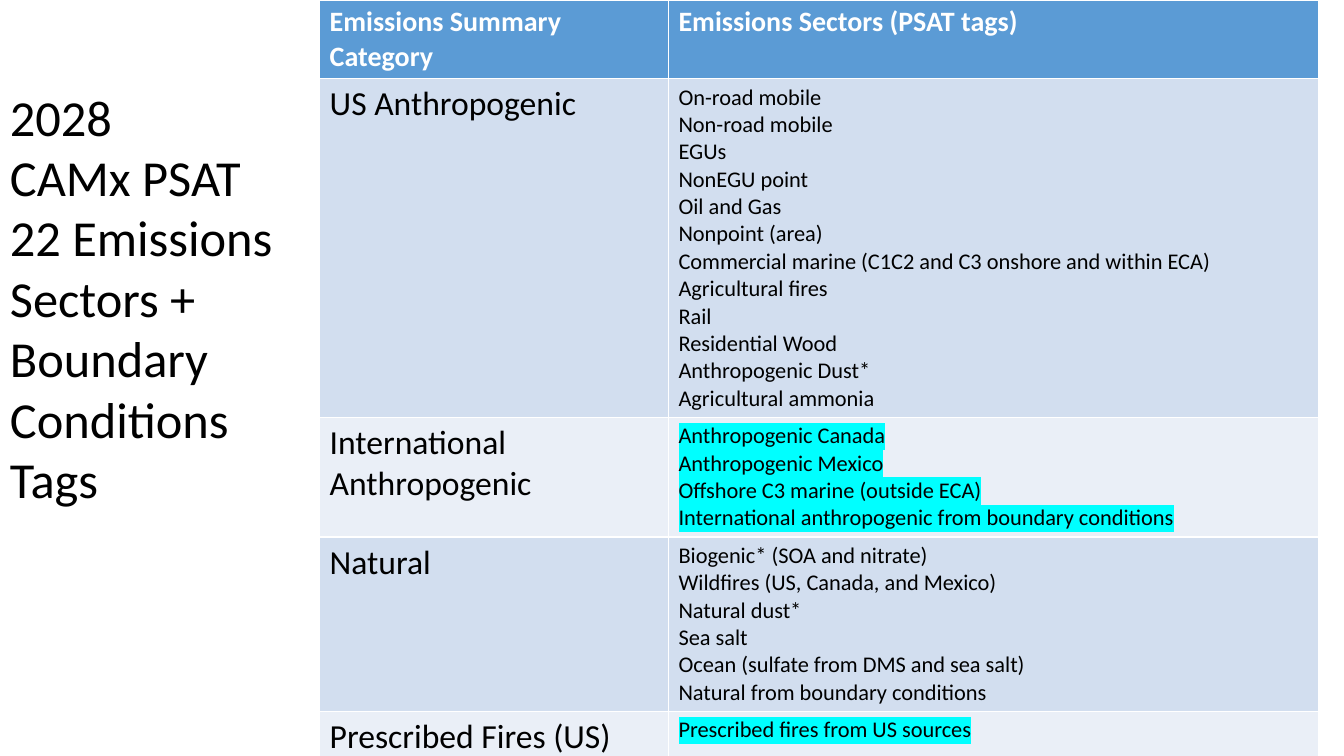
from dataclasses import dataclass

from lxml import etree
from pptx import Presentation
from pptx.dml.color import RGBColor
from pptx.enum.text import MSO_AUTO_SIZE
from pptx.oxml.ns import qn
from pptx.util import Inches, Pt

FONT = "Calibri"
BLACK = RGBColor(0x00, 0x00, 0x00)
WHITE = RGBColor(0xFF, 0xFF, 0xFF)
HEADER_BLUE = RGBColor(0x5B, 0x9B, 0xD5)
BAND_DARK = RGBColor(0xD2, 0xDE, 0xEF)
BAND_LIGHT = RGBColor(0xEA, 0xEF, 0xF7)
CYAN = RGBColor(0x00, 0xFF, 0xFF)
FIT_SHAPE = MSO_AUTO_SIZE.SHAPE_TO_FIT_TEXT


@dataclass
class Category:
    name: str
    sectors: list[str]
    height: float
    highlighted: bool = False


HEADERS = ["Emissions Summary Category", "Emissions Sectors (PSAT tags)"]
HEADER_HEIGHT = 0.63
COLUMN_WIDTHS = [3.46, 6.45]
TITLE = ["2028", "CAMx PSAT", "22 Emissions Sectors + Boundary Conditions", "Tags"]
CATEGORIES = [
    Category("US Anthropogenic", [
        "On-road mobile",
        "Non-road mobile",
        "EGUs",
        "NonEGU point",
        "Oil and Gas",
        "Nonpoint (area)",
        "Commercial marine (C1C2 and C3 onshore and within ECA)",
        "Agricultural fires",
        "Rail",
        "Residential Wood",
        "Anthropogenic Dust*",
        "Agricultural ammonia",
    ], 2.92),
    Category("International Anthropogenic", [
        "Anthropogenic Canada",
        "Anthropogenic Mexico",
        "Offshore C3 marine (outside ECA)",
        "International anthropogenic from boundary conditions",
    ], 1.03, True),
    Category("Natural", [
        "Biogenic* (SOA and nitrate)",
        "Wildfires (US, Canada, and Mexico)",
        "Natural dust*",
        "Sea salt",
        "Ocean (sulfate from DMS and sea salt)",
        "Natural from boundary conditions",
    ], 1.5),
    Category("Prescribed Fires (US)", ["Prescribed fires from US sources"], 0.41, True),
]


def highlight(r) -> None:
    mark = etree.SubElement(r.font._element, qn("a:highlight"))
    etree.SubElement(mark, qn("a:srgbClr"), val=str(CYAN))


def write(tf, lines: list[str], size: int, color: RGBColor = BLACK,
          bold: bool = False, highlighted: bool = False) -> None:
    for i, line in enumerate(lines):
        p = tf.add_paragraph() if i else tf.paragraphs[0]
        r = p.add_run()
        r.text = line
        p.font.name = FONT
        p.font.size = Pt(size)
        p.font.bold = bold
        p.font.color.rgb = color
        if highlighted:
            highlight(r)


def fill_cell(cell, color: RGBColor) -> None:
    cell.fill.solid()
    cell.fill.fore_color.rgb = color


def add_sector_table(s) -> None:
    heights = [HEADER_HEIGHT] + [c.height for c in CATEGORIES]
    table = s.shapes.add_table(
        len(heights), len(COLUMN_WIDTHS), Inches(3.17), Inches(0),
        Inches(sum(COLUMN_WIDTHS)), Inches(sum(heights))).table
    for column, width in zip(table.columns, COLUMN_WIDTHS):
        column.width = Inches(width)
    for row, height in zip(table.rows, heights):
        row.height = Inches(height)
    for col, header in enumerate(HEADERS):
        cell = table.cell(0, col)
        fill_cell(cell, HEADER_BLUE)
        write(cell.text_frame, [header], 20, WHITE, bold=True)
    for row, category in enumerate(CATEGORIES, 1):
        name_cell, sector_cell = table.cell(row, 0), table.cell(row, 1)
        for cell in (name_cell, sector_cell):
            fill_cell(cell, BAND_DARK if row % 2 else BAND_LIGHT)
        write(name_cell.text_frame, [category.name], 24)
        write(sector_cell.text_frame, category.sectors, 16,
              highlighted=category.highlighted)


def add_title(s) -> None:
    sp = s.shapes.add_textbox(Inches(0), Inches(0.8), Inches(2.81), Inches(4.95))
    tf = sp.text_frame
    tf.word_wrap = True
    tf.auto_size = FIT_SHAPE
    write(tf, TITLE, 36)


def main() -> None:
    prs = Presentation()
    prs.slide_width = Inches(13.33)
    prs.slide_height = Inches(7.5)
    s = prs.slides.add_slide(prs.slide_layouts[6])
    add_sector_table(s)
    add_title(s)
    prs.save("out.pptx")


if __name__ == "__main__":
    main()
